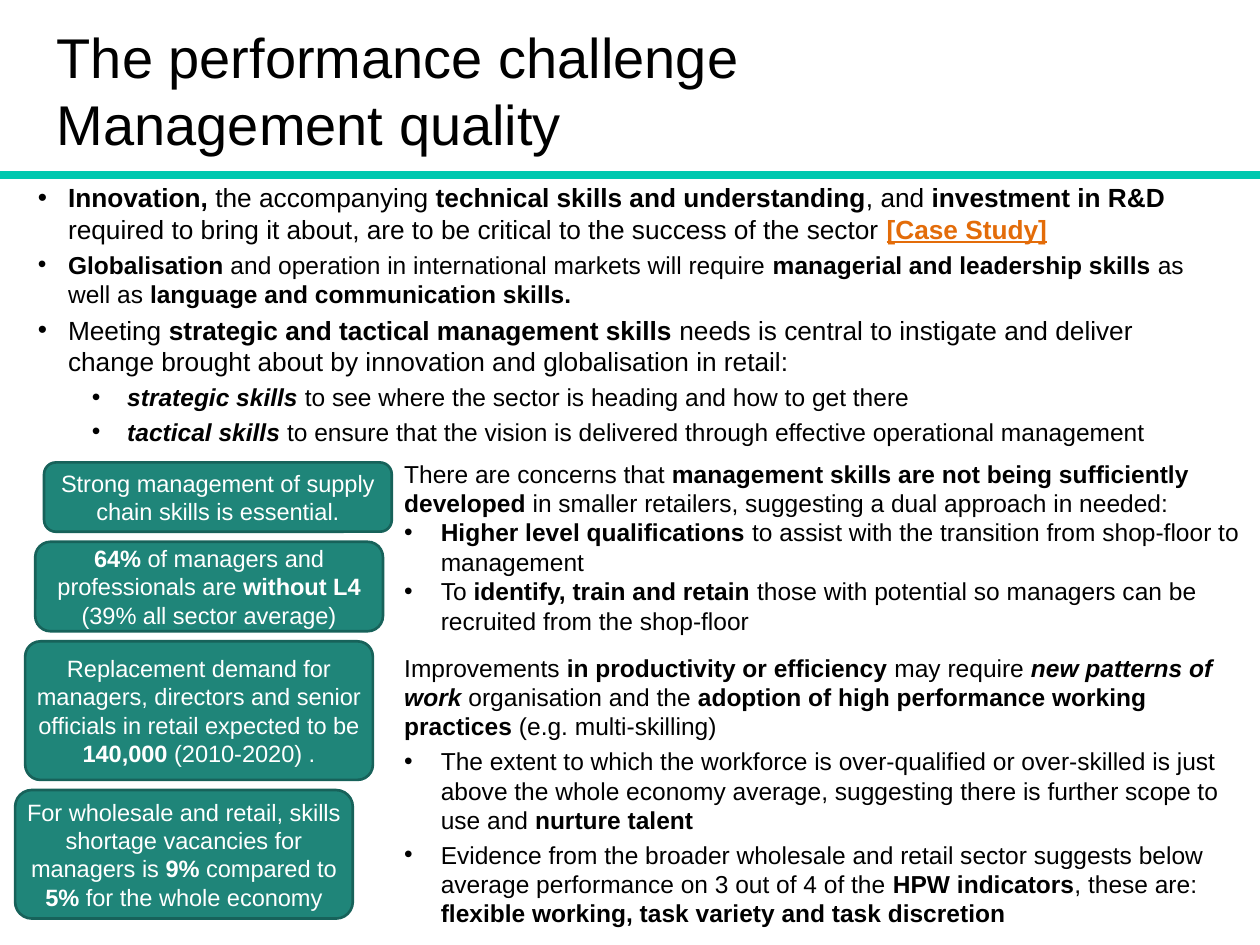
from lxml.etree import SubElement
from pptx import Presentation
from pptx.dml.color import RGBColor
from pptx.enum.shapes import MSO_CONNECTOR, MSO_SHAPE
from pptx.enum.text import MSO_ANCHOR, MSO_AUTO_SIZE, PP_ALIGN
from pptx.oxml.ns import qn
from pptx.util import Inches, Pt

BLACK = RGBColor(0x00, 0x00, 0x00)
WHITE = RGBColor(0xFF, 0xFF, 0xFF)
TEAL = RGBColor(0x00, 0xC8, 0xAF)
GREEN = RGBColor(0x1F, 0x85, 0x79)
DARK = RGBColor(0x17, 0x62, 0x5A)
ORANGE = RGBColor(0xE3, 0x6C, 0x09)

# Run styles
BOLD = {"bold": True}
BOTH = {"bold": True, "italic": True}
LINK = {"bold": True, "underline": True}

# Paragraph formats: text indent and hanging bullet in inches, spacing in points
TOP = {"left": 0.24, "hang": 0.24, "after": 3}
SUB = {"level": 1, "left": 0.71, "hang": 0.28, "after": 3}
PLAIN = {}
ITEM = {"left": 0.29, "hang": 0.29}
LEAD = {"before": 10, "after": 3}
POINT = {**ITEM, "after": 3}

# Content: a plain string is a plain run, a tuple is a styled run
TITLE = "The performance challenge\vManagement quality"
BODY = [
    (TOP, 15, [("Innovation, ", BOLD), "the accompanying ",
               ("technical skills and understanding", BOLD), ", and ",
               ("investment in R&D ", BOLD),
               "required to bring it about, are to be critical to the success of the sector ",
               ("[Case Study]", LINK)]),
    (TOP, 14, [("Globalisation", BOLD),
               " and operation in international markets will require ",
               ("managerial and leadership skills ", BOLD), "as well as ",
               ("language and communication skills.", BOLD)]),
    (TOP, 15, ["Meeting ", ("strategic and tactical management skills ", BOLD),
               "needs is central to instigate and deliver change brought about "
               "by innovation and globalisation in retail:"]),
    (SUB, 14, [("strategic skills ", BOTH),
               "to see where the sector is heading and how to get there"]),
    (SUB, 14, [("tactical skills ", BOTH),
               "to ensure that the vision is delivered through effective operational management"]),
]
PANEL = [
    (PLAIN, 14, ["There are concerns that ",
                 ("management skills are not being sufficiently developed ", BOLD),
                 "in smaller retailers, suggesting a dual approach in needed:"]),
    (ITEM, 14, [("Higher level qualifications ", BOLD),
                "to assist with the transition from shop-floor to management"]),
    (ITEM, 14, ["To ", ("identify, train and retain ", BOLD),
                "those with potential so managers can be recruited from the shop-floor"]),
    (LEAD, 14, ["Improvements ", ("in productivity or efficiency ", BOLD), "may require ",
                ("new patterns of work ", BOTH), "organisation and the ",
                ("adoption of high performance working practices ", BOLD),
                "(e.g. multi-skilling)"]),
    (POINT, 14, ["The extent to which the workforce is over-qualified or over-skilled is just "
                 "above the whole economy average, suggesting there is further scope to use and ",
                 ("nurture talent", BOLD)]),
    (POINT, 14, ["Evidence from the broader wholesale and retail sector suggests below average "
                 "performance on 3 out of 4 of the ", ("HPW indicators", BOLD), ", these are: ",
                 ("flexible working, task variety and task discretion", BOLD)]),
]
# Left, top, width, height, corner, side inset, runs
CARDS = [
    (0.35, 3.67, 2.76, 0.55, 0.17, 0.04,
     ["Strong management of supply chain skills is essential."]),
    (0.28, 4.3, 2.76, 0.71, 0.17, 0.1,
     [("64% ", BOLD), "of managers and professionals are ", ("without L4 ", BOLD),
      "(39% all sector average)"]),
    (0.2, 5.09, 2.76, 1.1, 0.11, 0.04,
     ["Replacement demand for managers, directors and senior officials in retail "
      "expected to be ", ("140,000 ", BOLD), "(2010-2020) ."]),
    (0.12, 6.27, 2.68, 1.02, 0.13, 0.04,
     ["For wholesale and retail, skills shortage vacancies for managers is ",
      ("9% ", BOLD), "compared to ", ("5% ", BOLD), "for the whole economy"]),
]


def place(shape, *box):
    for name, val in zip(("left", "top", "width", "height"), box):
        setattr(shape, name, Inches(val))


def style(font, size, color, extra=PLAIN):
    base = {"name": "Arial", "size": Pt(size), "bold": False,
            "italic": False, "underline": False}
    for name, val in {**base, **extra}.items():
        setattr(font, name, val)
    font.color.rgb = color


def set_para(para, form, align):
    para.level = form.get("level", 0)
    para.alignment = align
    para.space_before = Pt(form.get("before", 0))
    para.space_after = Pt(form.get("after", 0))
    if "hang" in form:
        props = para._p.get_or_add_pPr()
        props.set("marL", str(Inches(form["left"])))
        props.set("indent", str(-Inches(form["hang"])))
        SubElement(props, qn("a:buFont"), typeface="Arial")
        SubElement(props, qn("a:buChar"), char="•")


def write(frame, paras, color=BLACK, align=PP_ALIGN.LEFT, anchor=MSO_ANCHOR.TOP):
    frame.word_wrap = True
    frame.auto_size = MSO_AUTO_SIZE.NONE
    frame.vertical_anchor = anchor
    for num, (form, size, runs) in enumerate(paras):
        para = frame.add_paragraph() if num else frame.paragraphs[0]
        set_para(para, form, align)
        for part in runs:
            text, look = (part, PLAIN) if isinstance(part, str) else part
            run = para.add_run()
            run.text = text
            style(run.font, size, ORANGE if look is LINK else color, look)


def add_box(slide, kind, box, fill):
    shape = slide.shapes.add_shape(kind, *map(Inches, box))
    shape.shadow.inherit = False
    shape.fill.solid()
    shape.fill.fore_color.rgb = fill
    return shape


def main():
    deck = Presentation()
    deck.slide_width, deck.slide_height = Inches(10), Inches(7.5)
    slide = deck.slides.add_slide(deck.slide_layouts[1])

    # Title and rule below it
    title = slide.shapes.title
    place(title, 0.35, 0.29, 6.92, 1.34)
    frame = title.text_frame
    frame.text = TITLE
    frame.auto_size = MSO_AUTO_SIZE.NONE
    frame.vertical_anchor = MSO_ANCHOR.MIDDLE
    frame.margin_top, frame.margin_bottom = 0, Inches(0.5)
    para = frame.paragraphs[0]
    para.alignment = PP_ALIGN.LEFT
    for run in para.runs:
        style(run.font, 32, BLACK)

    rule = slide.shapes.add_connector(
        MSO_CONNECTOR.STRAIGHT, 0, Inches(1.39), Inches(10), Inches(1.39))
    rule.line.color.rgb = TEAL
    rule.line.width = Pt(5)
    SubElement(rule._element.spPr, qn("a:effectLst"))

    # Main list
    body = slide.placeholders[1]
    place(body, 0.2, 1.39, 9.61, 2.28)
    write(body.text_frame, BODY)

    # Right panel
    panel = add_box(slide, MSO_SHAPE.RECTANGLE, (3.11, 3.59, 6.89, 3.91), WHITE)
    panel.line.fill.background()
    write(panel.text_frame, PANEL)

    # Cards on the left
    for *box, corner, inset, runs in CARDS:
        card = add_box(slide, MSO_SHAPE.ROUNDED_RECTANGLE, box, GREEN)
        card.adjustments[0] = corner
        card.line.color.rgb = DARK
        card.line.width = Pt(1.5)
        frame = card.text_frame
        frame.margin_left = frame.margin_right = Inches(inset)
        write(frame, [(PLAIN, 13.5, runs)], WHITE, PP_ALIGN.CENTER, MSO_ANCHOR.MIDDLE)

    deck.save("out.pptx")


if __name__ == "__main__":
    main()
